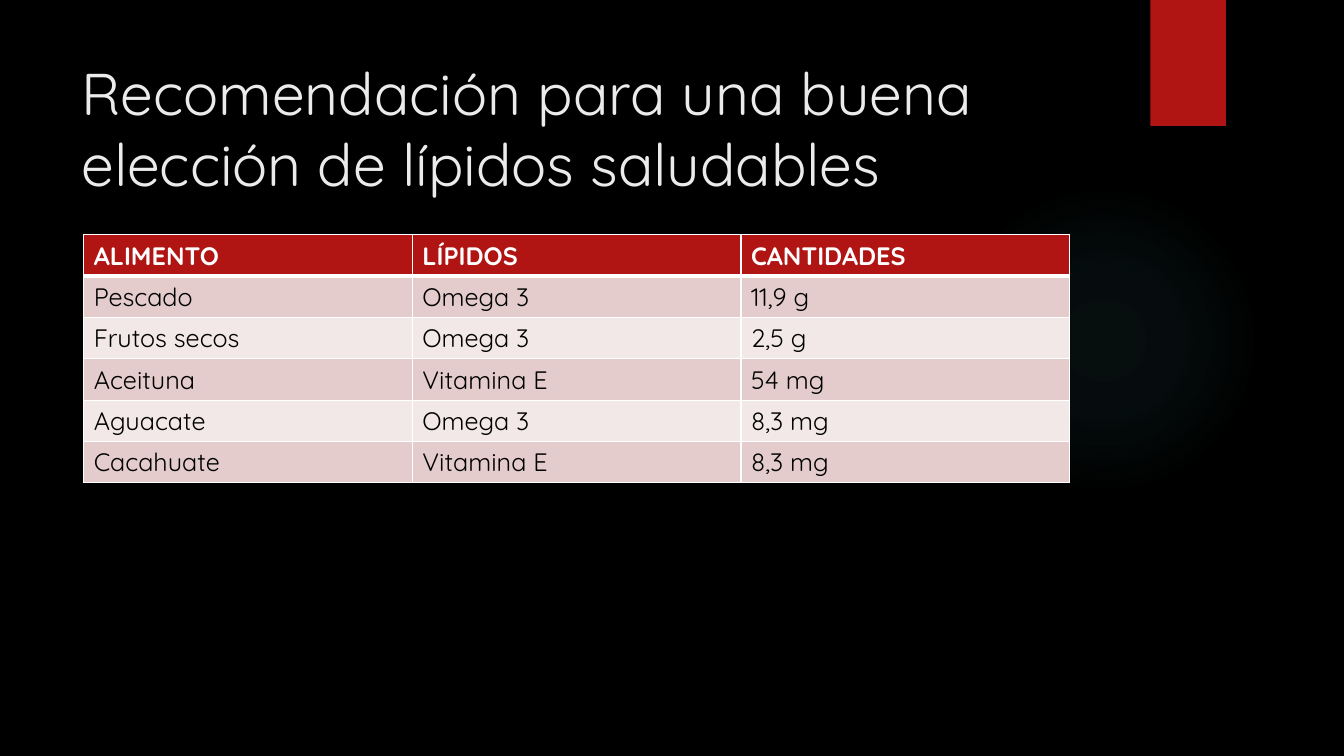
import pptx
import pptx.util
import pptx.oxml
import pptx.dml.color
import pptx.enum.shapes
import pptx.enum.text

# Content
TITLE = "Recomendación para una buena elección de lípidos saludables"
ROWS = [
    ("ALIMENTO", "LÍPIDOS", "CANTIDADES"),
    ("Pescado", "Omega 3", "11,9 g"),
    ("Frutos secos", "Omega 3", "2,5 g"),
    ("Aceituna", "Vitamina E", "54 mg"),
    ("Aguacate", "Omega 3", "8,3 mg"),
    ("Cacahuate", "Vitamina E", "8,3 mg"),
]

# Formats
RED, WHITE = "B01513", "FFFFFF"
BANDS = ("E4CCCC", "F2E8E7")
HEAD = {"size": pptx.util.Pt(18), "name": "Quicksand", "bold": True}
BODY = {**HEAD, "bold": False}
BIG = {**BODY, "size": pptx.util.Pt(42)}
GLOW = [(0, 7), (36, 6), (69, 0), (100, 0)]  # stop, opacity in percent
COL, ROW = 3.26, 0.41
NS = 'xmlns:a="http://schemas.openxmlformats.org/drawingml/2006/main"'
Shape = pptx.enum.shapes.MSO_SHAPE
Inches = pptx.util.Inches


def color(hue):
    return pptx.dml.color.RGBColor.from_string(hue)


def style(font, form, hue):
    for key, val in form.items():
        setattr(font, key, val)
    font.color.rgb = color(hue)


def paint(fill, hue):
    fill.solid()
    fill.fore_color.rgb = color(hue)


def add_shape(kind, *box):
    shape = slide.shapes.add_shape(kind, *map(Inches, box))
    shape.shadow.inherit = False
    shape.line.fill.background()
    return shape


def add_edges(cell, base):
    for side in "LRTB":
        width = pptx.util.Pt(base if side == "B" else 1)
        cell._tc.get_or_add_tcPr().append(pptx.oxml.parse_xml(
            f'<a:ln{side} {NS} w="{width}"><a:solidFill>'
            f'<a:srgbClr val="{WHITE}"/></a:solidFill></a:ln{side}>'))


# Slide and background
deck = pptx.Presentation()
deck.slide_width, deck.slide_height = Inches(13.33), Inches(7.5)
slide = deck.slides.add_slide(deck.slide_layouts[6])
paint(slide.background.fill, "000000")

# Soft glow
glow = add_shape(Shape.OVAL, 9.41, 1.83, 3.08, 3.08)
glow.fill.background()
stops = "".join(
    f'<a:gs pos="{pos * 1000}"><a:srgbClr val="50B9C1">'
    f'<a:alpha val="{alpha * 1000}"/></a:srgbClr></a:gs>'
    for pos, alpha in GLOW)
blank = glow._element.spPr.find(pptx.oxml.ns.qn("a:noFill"))
blank.getparent().replace(blank, pptx.oxml.parse_xml(
    f'<a:gradFill {NS}><a:gsLst>{stops}</a:gsLst><a:path path="circle">'
    '<a:fillToRect l="50000" t="50000" r="50000" b="50000"/>'
    '</a:path></a:gradFill>'))

# Red tab
paint(add_shape(Shape.RECTANGLE, 11.41, 0, 0.75, 1.25).fill, RED)

# Title
box = slide.shapes.add_textbox(*map(Inches, (0.71, 0.5, 10.29, 1.53)))
frame = box.text_frame
frame.word_wrap = True
frame.vertical_anchor = pptx.enum.text.MSO_ANCHOR.MIDDLE
frame.text = TITLE
style(frame.paragraphs[0].font, BIG, "EBEBEB")

# Table
count = len(ROWS[0])
size = (0.83, 2.33, COL * count, ROW * len(ROWS))
table = slide.shapes.add_table(len(ROWS), count, *map(Inches, size)).table
table.horz_banding = False
for column in table.columns:
    column.width = Inches(COL)
for r, row in enumerate(ROWS):
    table.rows[r].height = Inches(ROW)
    for c, text in enumerate(row):
        cell = table.cell(r, c)
        cell.text = text
        add_edges(cell, 1 if r else 3)
        paint(cell.fill, BANDS[(r - 1) % 2] if r else RED)
        style(cell.text_frame.paragraphs[0].font,
              BODY if r else HEAD, "000000" if r else WHITE)

deck.save("out.pptx")
